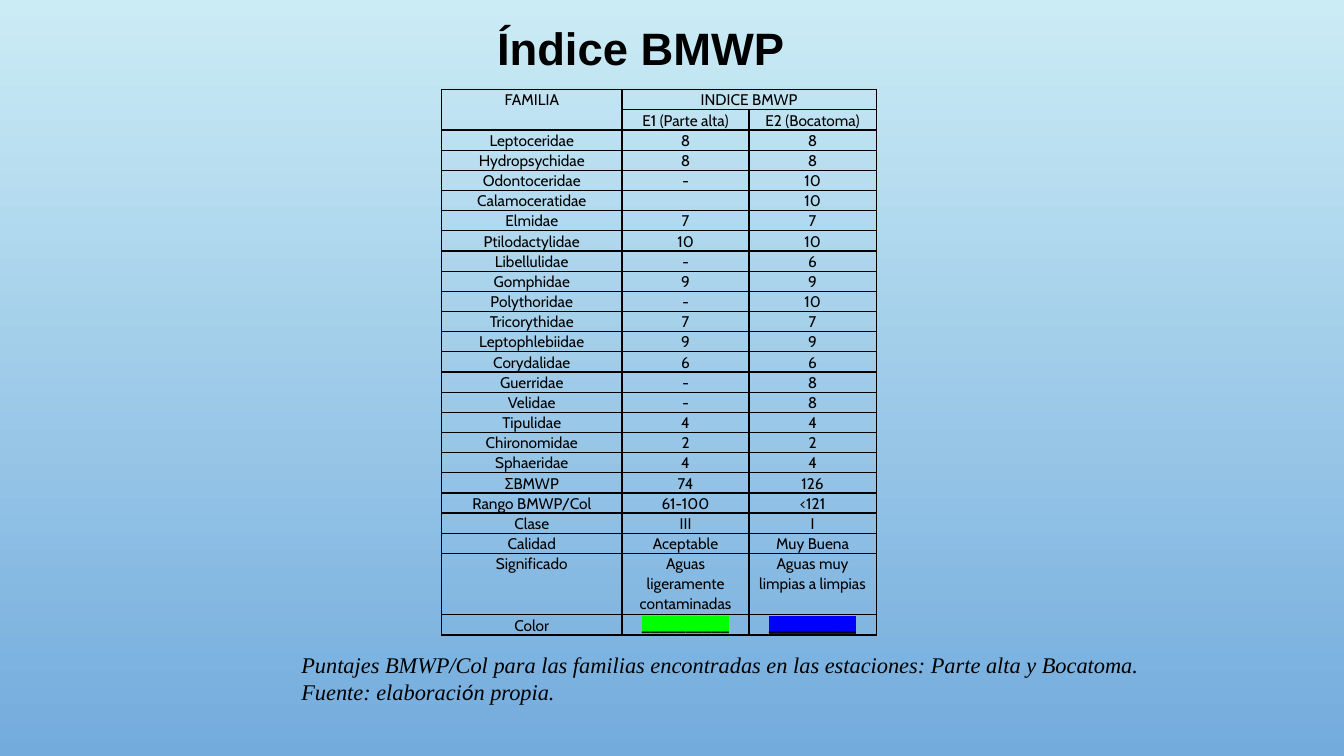
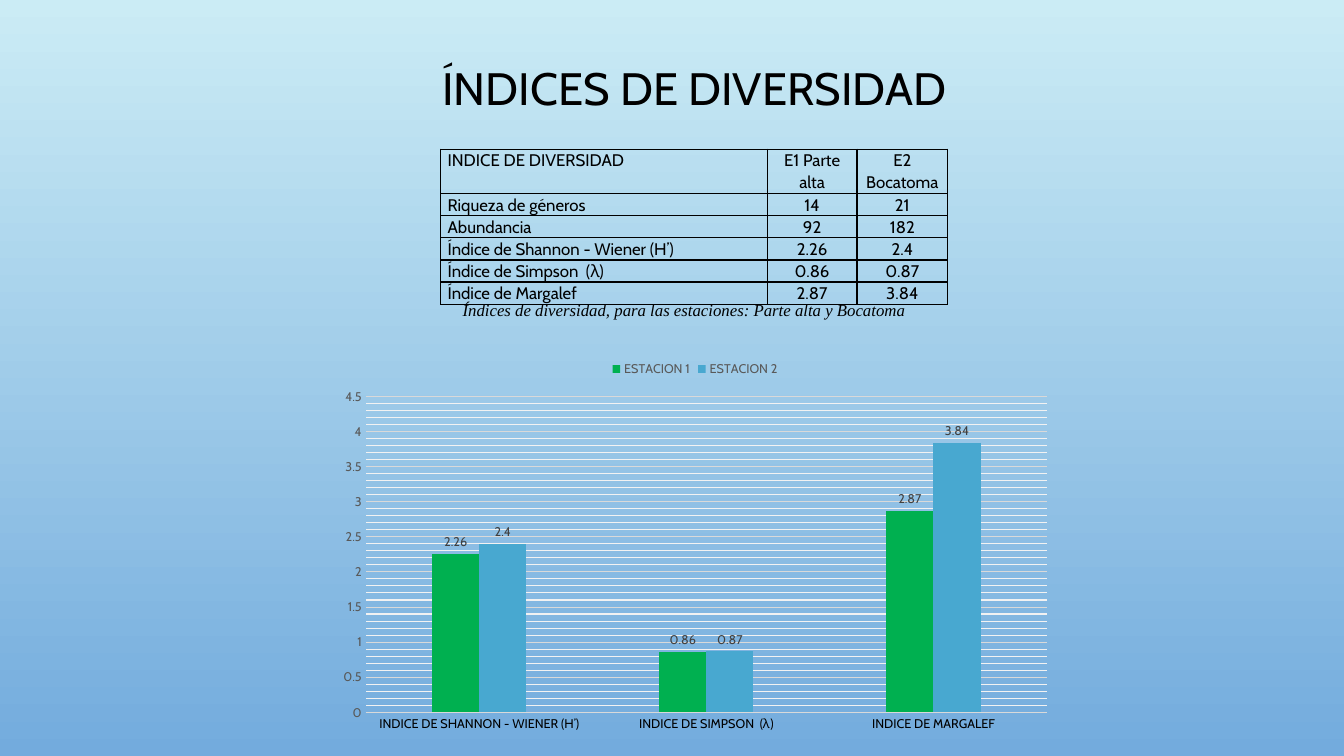
from lxml import etree
from pptx import Presentation
from pptx.chart.data import CategoryChartData
from pptx.dml.color import RGBColor
from pptx.enum.chart import XL_CHART_TYPE, XL_LABEL_POSITION, XL_LEGEND_POSITION, XL_TICK_MARK
from pptx.enum.text import MSO_ANCHOR, PP_ALIGN
from pptx.oxml import parse_xml
from pptx.oxml.ns import nsdecls, qn
from pptx.util import Inches, Pt

CENTER, LEFT = PP_ALIGN.CENTER, PP_ALIGN.LEFT
MIDDLE, TOP = MSO_ANCHOR.MIDDLE, MSO_ANCHOR.TOP
CLUSTERED = XL_CHART_TYPE.COLUMN_CLUSTERED
OUTSIDE_END = XL_LABEL_POSITION.OUTSIDE_END
LEGEND_TOP = XL_LEGEND_POSITION.TOP
NO_TICK = XL_TICK_MARK.NONE

COLORS = {
    "sky": "CBECF5", "water": "73ABDD", "ink": "000000",
    "green": "00FF00", "blue": "0000FF",
    "station_1": "00B050", "station_2": "48A8D0",
    "axis_text": "595959", "label_text": "404040",
    "grid": "D9D9D9", "minor_grid": "F2F2F2",
}
BODY_FONT, CAPTION_FONT = "Cabin", "Times New Roman"

BMWP_ROWS = [
    ("FAMILIA", "INDICE BMWP", ""),
    ("", "E1 (Parte alta)", "E2 (Bocatoma)"),
    ("Leptoceridae", "8", "8"),
    ("Hydropsychidae", "8", "8"),
    ("Odontoceridae", "-", "10"),
    ("Calamoceratidae", "", "10"),
    ("Elmidae", "7", "7"),
    ("Ptilodactylidae", "10", "10"),
    ("Libellulidae", "-", "6"),
    ("Gomphidae", "9", "9"),
    ("Polythoridae", "-", "10"),
    ("Tricorythidae", "7", "7"),
    ("Leptophlebiidae", "9", "9"),
    ("Corydalidae", "6", "6"),
    ("Guerridae", "-", "8"),
    ("Velidae", "-", "8"),
    ("Tipulidae", "4", "4"),
    ("Chironomidae", "2", "2"),
    ("Sphaeridae", "4", "4"),
    ("ƩBMWP", "74", "126"),
    ("Rango BMWP/Col", "61-100", "<121"),
    ("Clase", "III", "I"),
    ("Calidad", "Aceptable", "Muy Buena"),
    ("Significado", "Aguas ligeramente contaminadas", "Aguas muy limpias a limpias"),
    ("Color", "__________", "__________"),
]
DIVERSITY_ROWS = [
    ("INDICE DE DIVERSIDAD", "E1 Parte alta", "E2 Bocatoma"),
    ("Riqueza de géneros", "14", "21"),
    ("Abundancia", "92", "182"),
    ("Índice de Shannon - Wiener (H’)", "2.26", "2.4"),
    ("Índice de Simpson  (λ)", "0.86", "0.87"),
    ("Índice de Margalef", "2.87", "3.84"),
]
CATEGORIES = ["INDICE DE SHANNON - WIENER (H’)", "INDICE DE SIMPSON  (λ)", "INDICE DE MARGALEF"]
SERIES = [
    ("ESTACION 1", (2.26, 0.86, 2.87), "station_1"),
    ("ESTACION 2", (2.4, 0.87, 3.84), "station_2"),
]


def rgb(name):
    """Return the palette colour with this name."""
    return RGBColor.from_string(COLORS[name])


def style_font(font, size, color="ink", name=BODY_FONT, bold=False, italic=False):
    """Set the size, colour and face of a font."""
    font.size, font.name = Pt(size), name
    font.bold, font.italic = bold, italic
    font.color.rgb = rgb(color)


def add_gradient_slide(presentation):
    """Add a blank slide with the shared sky-to-water background."""
    slide = presentation.slides.add_slide(presentation.slide_layouts[6])
    fill = slide.background.fill
    fill.gradient()
    fill.gradient_angle = 270
    for stop, position, color in zip(fill.gradient_stops, (0, 1), ("sky", "water")):
        stop.position = position
        stop.color.rgb = rgb(color)
    return slide


def add_text(slide, box, anchor, wrap=True):
    """Add a text box and return its first paragraph."""
    frame = slide.shapes.add_textbox(*map(Inches, box)).text_frame
    frame.word_wrap = wrap
    frame.vertical_anchor = anchor
    frame.margin_top, frame.margin_bottom = Inches(0.03), 0
    return frame.paragraphs[0]


def add_title(slide, box, text, font_name, bold=False):
    """Add a centred slide title."""
    paragraph = add_text(slide, box, MIDDLE)
    paragraph.text = text
    paragraph.alignment = CENTER
    paragraph.line_spacing = 0.9
    style_font(paragraph.font, 32.4, name=font_name, bold=bold)


def add_caption(slide, box, size, parts, wrap=True):
    """Add an italic caption made of (text, font name) parts."""
    paragraph = add_text(slide, box, TOP, wrap)
    style_font(paragraph.font, size, name=CAPTION_FONT, italic=True)
    for text, font_name in parts:
        run = paragraph.add_run()
        run.text = text
        if font_name != CAPTION_FONT:
            run.font.name = font_name


def set_borders(cell):
    """Draw a thin black line on every side of a cell."""
    properties = cell._tc.get_or_add_tcPr()
    for side in ("lnL", "lnR", "lnT", "lnB"):
        properties.append(parse_xml(
            f'<a:{side} {nsdecls("a")} w="12700"><a:solidFill>'
            f'<a:srgbClr val="{COLORS["ink"]}"/></a:solidFill></a:{side}>'))


def highlight(cell, color):
    """Put a marker colour behind the text of a cell."""
    properties = cell.text_frame.paragraphs[0].runs[0]._r.get_or_add_rPr()
    marker = etree.SubElement(properties, qn("a:highlight"))
    etree.SubElement(marker, qn("a:srgbClr")).set("val", COLORS[color])


def fill_cell(cell, text, size, margin, alignment):
    """Write one bordered, transparent cell."""
    cell.margin_left = cell.margin_right = Inches(margin)
    cell.margin_top = cell.margin_bottom = 0
    set_borders(cell)
    cell.fill.background()
    paragraph = cell.text_frame.paragraphs[0]
    paragraph.alignment = alignment
    paragraph.line_spacing = 1.07
    style_font(paragraph.font, size)
    if text:
        paragraph.text = text
    else:
        etree.SubElement(paragraph._p, qn("a:endParaRPr")).set("sz", str(size * 100))


def add_grid(slide, left, top, widths, heights, rows, size, margin, first_alignment):
    """Add a plain ruled table and return it."""
    frame = slide.shapes.add_table(
        len(rows), len(widths), Inches(left), Inches(top),
        Inches(sum(widths)), Inches(sum(heights)))
    table = frame.table
    table.first_row = table.horz_banding = False
    for column, width in zip(table.columns, widths):
        column.width = Inches(width)
    for row, height in zip(table.rows, heights):
        row.height = Inches(height)
    for row_index, row in enumerate(rows):
        for column_index, text in enumerate(row):
            alignment = CENTER if column_index else first_alignment
            fill_cell(table.cell(row_index, column_index), text, size, margin, alignment)
    return table


def style_axes(chart):
    """Style the category axis, the value axis and its grids."""
    category, value = chart.category_axis, chart.value_axis
    for axis, color in ((category, "ink"), (value, "axis_text")):
        axis.major_tick_mark = axis.minor_tick_mark = NO_TICK
        style_font(axis.tick_labels.font, 9, color)
    category.format.line.color.rgb = rgb("grid")
    category.format.line.width = Pt(0.75)
    value.format.line.fill.background()
    value.minimum_scale, value.maximum_scale = 0, 4.5
    value.major_unit, value.minor_unit = 0.5, 0.1
    value.has_major_gridlines = value.has_minor_gridlines = True
    value.major_gridlines.format.line.color.rgb = rgb("grid")
    value.major_gridlines.format.line.width = Pt(0.75)
    minor_gridlines = value._element.find(qn("c:minorGridlines"))
    minor_gridlines.append(parse_xml(
        f'<c:spPr {nsdecls("c", "a")}><a:ln w="9525"><a:solidFill>'
        f'<a:srgbClr val="{COLORS["minor_grid"]}"/></a:solidFill></a:ln></c:spPr>'))


def add_diversity_chart(slide, box):
    """Add the clustered columns that compare both stations."""
    data = CategoryChartData()
    data.categories = CATEGORIES
    for name, values, _ in SERIES:
        data.add_series(name, values)
    chart = slide.shapes.add_chart(CLUSTERED, *map(Inches, box), data).chart
    chart.has_title = False
    style_font(chart.font, 10)
    chart.has_legend = True
    chart.legend.position = LEGEND_TOP
    chart.legend.include_in_layout = False
    style_font(chart.legend.font, 9, "axis_text")
    style_axes(chart)
    plot = chart.plots[0]
    plot.vary_by_categories = False
    plot.gap_width, plot.overlap = 282, 0
    for series, (_, _, color) in zip(plot.series, SERIES):
        series.format.fill.solid()
        series.format.fill.fore_color.rgb = rgb(color)
        labels = series.data_labels
        labels.show_value = True
        labels.position = OUTSIDE_END
        style_font(labels.font, 9, "label_text")


def build_bmwp_slide(presentation):
    """Build the slide with the BMWP scores by family."""
    slide = add_gradient_slide(presentation)
    add_title(slide, (0.69, 0.19, 11.33, 0.6), "Índice BMWP", "Arial", bold=True)
    heights = [0.2] * len(BMWP_ROWS)
    heights[-2] = 0.61
    table = add_grid(slide, 4.38, 0.89, (1.79, 1.26, 1.26), heights, BMWP_ROWS, 11, 0.05, CENTER)
    table.cell(0, 0).merge(table.cell(1, 0))
    table.cell(0, 1).merge(table.cell(0, 2))
    for column, color in ((1, "green"), (2, "blue")):
        highlight(table.cell(len(BMWP_ROWS) - 1, column), color)
    add_caption(slide, (2.89, 6.43, 8.52, 0.87), 16, [
        ("Puntajes BMWP/Col para las familias encontradas en las estaciones: "
         "Parte alta y Bocatoma. Fuente: elaboraci", CAPTION_FONT),
        ("ó", "Calibri"),
        ("n propia.", CAPTION_FONT),
    ])


def build_diversity_slide(presentation):
    """Build the slide with the diversity indices and their chart."""
    slide = add_gradient_slide(presentation)
    add_title(slide, (1.22, 0.58, 11.33, 0.61), "ÍNDICES DE DIVERSIDAD", BODY_FONT)
    heights = [0.44] + [0.22] * (len(DIVERSITY_ROWS) - 1)
    add_grid(slide, 4.37, 1.48, (3.24, 0.89, 0.9), heights, DIVERSITY_ROWS, 12, 0.07, LEFT)
    add_caption(slide, (4.49, 2.94, 4.8, 0.53), 12, [
        ("Índices de diversidad, para las estaciones: Parte alta y Bocatoma", CAPTION_FONT),
    ], wrap=False)
    add_diversity_chart(slide, (3.26, 3.47, 7.27, 3.87))


def main():
    """Build and save the presentation."""
    presentation = Presentation()
    presentation.slide_width, presentation.slide_height = Inches(13.33), Inches(7.5)
    build_bmwp_slide(presentation)
    build_diversity_slide(presentation)
    presentation.save("out.pptx")


if __name__ == "__main__":
    main()
